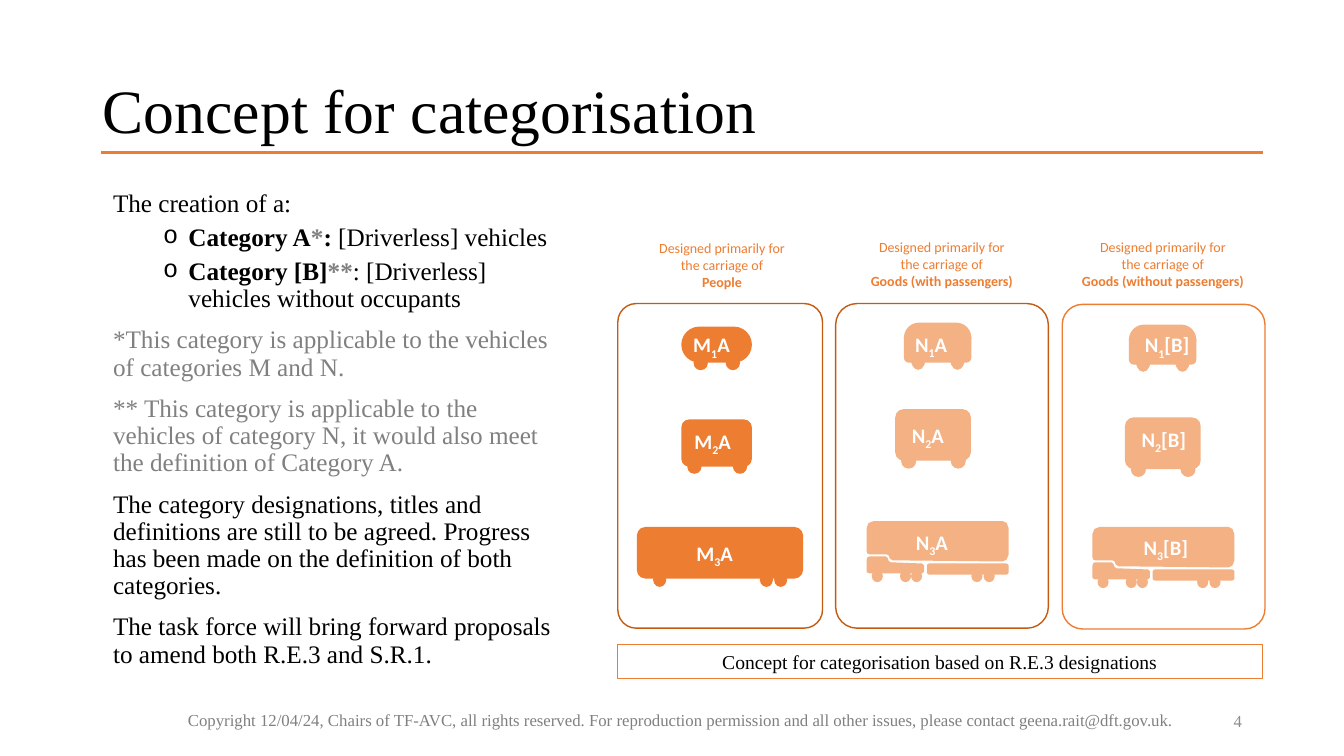
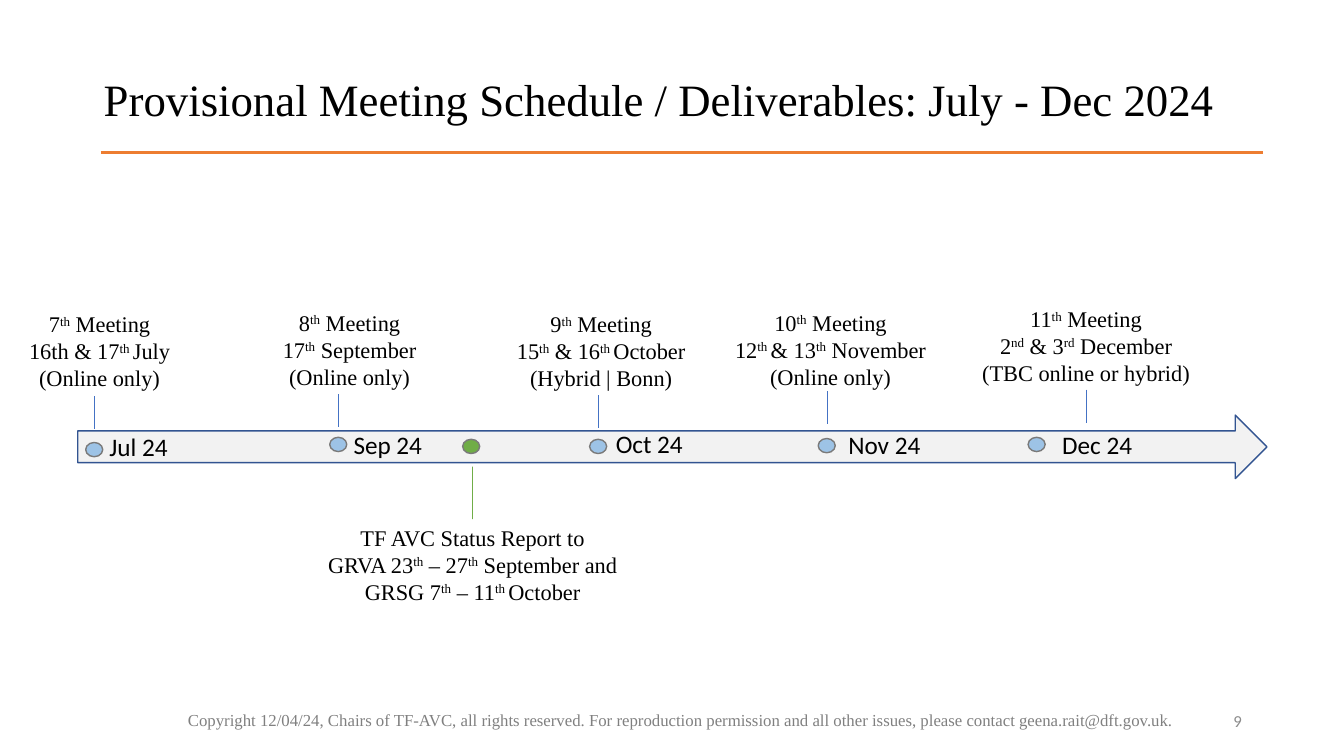
from lxml import etree
from pptx import Presentation
from pptx.dml.color import RGBColor
from pptx.enum.shapes import MSO_CONNECTOR, MSO_SHAPE
from pptx.enum.text import MSO_ANCHOR, PP_ALIGN
from pptx.oxml.ns import qn
from pptx.util import Cm, Pt

ROUNDED, OVAL = MSO_SHAPE.ROUNDED_RECTANGLE, MSO_SHAPE.OVAL
RECTANGLE, RIGHT_ARROW = MSO_SHAPE.RECTANGLE, MSO_SHAPE.RIGHT_ARROW
STRAIGHT = MSO_CONNECTOR.STRAIGHT
LEFT, CENTER, RIGHT = PP_ALIGN.LEFT, PP_ALIGN.CENTER, PP_ALIGN.RIGHT
TOP, MIDDLE = MSO_ANCHOR.TOP, MSO_ANCHOR.MIDDLE

SERIF, SANS = "Times New Roman", "Calibri"
BLACK, WHITE, GREY, NUMBER_GREY = "000000", "FFFFFF", "808080", "8C8C8C"
ORANGE, DARK_ORANGE, LIGHT_ORANGE = "ED7D31", "C55A11", "F4B183"
BLUE, LIGHT_BLUE, ARROW_BLUE = "4472C4", "9DC3E6", "325491"
GREEN, DOT_LINE, ARROW_FILL = "70AD47", "7A7A7A", "F2F2F2"

SUPERSCRIPT, SUBSCRIPT = "30000", "-25000"
FOOTER = ("Copyright 12/04/24, Chairs of TF-AVC, all rights reserved. For reproduction "
          "permission and all other issues, please contact geena.rait@dft.gov.uk.")

# Outlines of the truck's trailer and cab, in cm from its top left corner
TRAILER = [(0, .18), (.05, .05), (.18, 0), (3.43, 0), (3.53, .05), (3.58, .18),
           (3.58, .84), (3.53, .97), (3.43, 1.02), (.66, .99), (.59, .95),
           (.56, .87), (.51, .84), (.08, .84), (.02, .82), (0, .76)]
CAB = [(0, .99), (.02, .91), (.08, .89), (.48, .89), (.53, .93), (.56, 1.01),
       (.61, 1.04), (1.4, 1.07), (1.45, 1.12), (1.45, 1.27), (1.4, 1.32),
       (.08, 1.32), (.02, 1.3), (0, 1.27)]


# Basic elements
def colour(hex_string):
    return RGBColor.from_string(hex_string)


def style_font(font, size, name, hex_colour, bold=None):
    font.size, font.name, font.bold = Pt(size), name, bold
    font.color.rgb = colour(hex_colour)


def paint(shape, fill=None, line=None):
    shape.shadow.inherit = False
    if fill:
        shape.fill.solid()
        shape.fill.fore_color.rgb = colour(fill)
    else:
        shape.fill.background()
    if line:
        shape.line.color.rgb = colour(line)
        shape.line.width = Pt(1)
    else:
        shape.line.fill.background()


def add_box(slide, kind, box, fill=None, line=None, corner=None):
    shape = slide.shapes.add_shape(kind, *map(Cm, box))
    paint(shape, fill, line)
    if corner is not None:
        shape.adjustments[0] = corner
    return shape


def add_outline(slide, left, top, points, fill):
    corners = [(Cm(left + x), Cm(top + y)) for x, y in points]
    builder = slide.shapes.build_freeform(*corners[0])
    builder.add_line_segments(corners[1:], close=True)
    paint(builder.convert_to_shape(), fill)


def add_line(slide, start, end, hex_colour, width):
    line = slide.shapes.add_connector(STRAIGHT, *map(Cm, start + end))
    line.line.color.rgb = colour(hex_colour)
    line.line.width = Pt(width)
    etree.SubElement(line._element.spPr, qn("a:effectLst"))
    return line


def add_marked_runs(paragraph, text, baseline):
    """Write text; the pieces between ^ signs are raised or lowered."""
    for index, piece in enumerate(text.split("^")):
        if piece:
            run = paragraph.add_run()
            run.text = piece
            if index % 2:
                run._r.get_or_add_rPr().set("baseline", baseline)


def add_text(slide, box, lines, size, name=SERIF, hex_colour=BLACK, bold=None,
             align=LEFT, anchor=TOP, baseline=SUPERSCRIPT):
    text_box = slide.shapes.add_textbox(*map(Cm, box))
    frame = text_box.text_frame
    frame.word_wrap, frame.vertical_anchor = True, anchor
    for index, text in enumerate(lines):
        paragraph = frame.add_paragraph() if index else frame.paragraphs[0]
        paragraph.alignment = align
        style_font(paragraph.font, size, name, hex_colour, bold)
        add_marked_runs(paragraph, text, baseline)
    return text_box


# What the slides share: title, rule, footer and number
def add_titled_slide(presentation, title, box, size, number, number_font):
    slide = presentation.slides.add_slide(presentation.slide_layouts[5])
    placeholder = slide.shapes.title
    placeholder.left, placeholder.top, placeholder.width, placeholder.height = map(Cm, box)
    frame = placeholder.text_frame
    frame.text, frame.vertical_anchor, frame.word_wrap = title, MIDDLE, True
    paragraph = frame.paragraphs[0]
    paragraph.alignment, paragraph.line_spacing = LEFT, 0.9
    style_font(paragraph.font, size, SERIF, BLACK)
    add_line(slide, (2.54, 3.85), (31.83, 3.85), ORANGE, 2.25)
    add_text(slide, (3.4, 17.63, 27.53, 1.02), [FOOTER], 12, hex_colour=GREY,
             align=CENTER, anchor=MIDDLE)
    add_text(slide, (23.93, 17.65, 7.62, 1.02), [number], 12, number_font, NUMBER_GREY,
             align=RIGHT, anchor=MIDDLE)
    return slide


# Vehicles
def add_wheels(slide, left, top, offsets, size, fill):
    for offset in offsets:
        add_box(slide, OVAL, (left + offset, top, *size), fill)


def add_vehicle(slide, body, wheel_offsets, wheel_drop, wheel_size, fill, corner=None):
    left, top = body[:2]
    add_box(slide, ROUNDED, body, fill, corner=corner)
    add_wheels(slide, left, top + wheel_drop, wheel_offsets, wheel_size, fill)


def add_small_van(slide, left, top):
    add_box(slide, ROUNDED, (left, top, 1.7, .76), LIGHT_ORANGE, corner=.5)
    add_vehicle(slide, (left, top + .25, 1.7, .76), (.18, 1.17), .43, (.36, .51), LIGHT_ORANGE)


def add_large_van(slide, left, top):
    add_vehicle(slide, (left, top, 1.91, 1.3), (.15, 1.4), 1.12, (.38, .38), LIGHT_ORANGE)


def add_truck(slide, left, top):
    add_outline(slide, left, top, TRAILER, LIGHT_ORANGE)
    add_outline(slide, left, top, CAB, LIGHT_ORANGE)
    add_box(slide, ROUNDED, (left + 1.52, top + 1.07, 2.06, .28), LIGHT_ORANGE, corner=.22)
    add_wheels(slide, left, top + 1.24, (.13, .84, 1.12, 2.64, 2.95), (.28, .3), LIGHT_ORANGE)


def add_panel(slide, box, line, corner, heading_box, purpose):
    add_box(slide, ROUNDED, box, line=line, corner=corner)
    heading = add_text(slide, heading_box,
                       ["Designed primarily for", "the carriage of", purpose],
                       10, SANS, ORANGE, align=CENTER)
    heading.text_frame.paragraphs[2].font.bold = True


def add_vehicle_labels(slide, letter, suffix, positions):
    for number, (left, top) in enumerate(positions, 1):
        add_text(slide, (left, top, 2.24, .89), [f"{letter}^{number}^{suffix}"],
                 14.7, SANS, WHITE, bold=True, baseline=SUBSCRIPT)


def add_body(slide):
    """Each paragraph: bulleted or not, then runs of text, colour and bold."""
    paragraphs = [
        (False, [("The creation of a:", BLACK, False)]),
        (True, [("Category A", BLACK, True), ("*", GREY, True), (": ", BLACK, True),
                ("[Driverless] vehicles", BLACK, False)]),
        (True, [("Category [B]", BLACK, True), ("**", GREY, True),
                (": [Driverless] vehicles without occupants", BLACK, False)]),
        (False, [("*This category is applicable to the vehicles of categories M and N.",
                  GREY, False)]),
        (False, [("** This category is applicable to the vehicles of category N, it would "
                  "also meet the definition of Category A.", GREY, False)]),
        (False, [("The category designations, titles and definitions are still to be agreed. "
                  "Progress has been made on the definition of both categories.",
                  BLACK, False)]),
        (False, [("The task force will bring forward proposals to amend both R.E.3 and S.R.1.",
                  BLACK, False)]),
    ]
    frame = slide.shapes.add_textbox(Cm(2.6), Cm(4.67), Cm(11.73), Cm(12.98)).text_frame
    frame.word_wrap = True
    for index, (bulleted, runs) in enumerate(paragraphs):
        paragraph = frame.add_paragraph() if index else frame.paragraphs[0]
        paragraph.line_spacing = 0.9
        paragraph.space_before = Pt(5 if bulleted else 10)
        if bulleted:
            properties = paragraph._p.get_or_add_pPr()
            properties.set("marL", str(Cm(1.9)))
            properties.set("indent", str(Cm(-.64)))
            etree.SubElement(properties, qn("a:buFont")).set("typeface", "Courier New")
            etree.SubElement(properties, qn("a:buChar")).set("char", "o")
        for text, hex_colour, bold in runs:
            run = paragraph.add_run()
            run.text = text
            style_font(run.font, 18, SERIF, hex_colour, bold)


# Slides
def build_concept_slide(presentation):
    slide = add_titled_slide(presentation, "Concept for categorisation",
                             (2.34, 1.02, 29.21, 3.68), 44, "4", SERIF)
    add_body(slide)

    # Panels for people, goods with and goods without passengers
    add_panel(slide, (15.57, 7.65, 5.16, 8.18), DARK_ORANGE, .09,
              (16, 5.92, 4.39, 1.55), "People")
    add_panel(slide, (21.06, 7.65, 5.36, 8.18), DARK_ORANGE, .1,
              (21.18, 5.89, 5.11, 1.55), "Goods (with passengers)")
    add_panel(slide, (26.77, 7.67, 5.11, 8.18), ORANGE, .1,
              (26.75, 5.89, 5.11, 1.55), "Goods (without passengers)")

    # Passenger vehicles
    add_vehicle(slide, (17.17, 8.23, 1.78, .91), (.31, 1.12), .74, (.36, .36), ORANGE, .5)
    add_vehicle(slide, (17.17, 10.57, 1.78, 1.19), (.15, 1.3), 1.01, (.36, .36), ORANGE)
    add_vehicle(slide, (16.05, 13.28, 4.19, 1.3), (.41, 3.1, 3.46), 1.15, (.33, .36), ORANGE)

    # Goods vehicles
    for add_goods_vehicle, positions in (
            (add_small_van, [(22.78, 8.13), (28.45, 8.18)]),
            (add_large_van, [(22.56, 10.31), (28.35, 10.52)]),
            (add_truck, [(21.84, 13.13), (27.53, 13.28)])):
        for left, top in positions:
            add_goods_vehicle(slide, left, top)

    add_vehicle_labels(slide, "M", "A", [(17.22, 8.25), (17.25, 10.69), (17.3, 13.51)])
    add_vehicle_labels(slide, "N", "A", [(22.81, 8.23), (22.73, 10.52), (22.83, 13.23)])
    add_vehicle_labels(slide, "N", "[B]", [(28.6, 8.25), (28.52, 10.64), (28.57, 13.36)])

    # Caption
    caption = add_box(slide, RECTANGLE, (15.56, 16.24, 16.26, .86), WHITE, ORANGE)
    caption.text_frame.text = "Concept for categorisation based on R.E.3 designations"
    paragraph = caption.text_frame.paragraphs[0]
    paragraph.alignment = CENTER
    style_font(paragraph.font, 14, SERIF, BLACK)


def add_dot(slide, left, top, fill):
    add_box(slide, OVAL, (left, top, .43, .36), fill, DOT_LINE)


def build_schedule_slide(presentation):
    slide = add_titled_slide(presentation,
                             "Provisional Meeting Schedule / Deliverables: July - Dec 2024",
                             (2.36, .74, 30, 3.68), 32, "9", SANS)
    add_box(slide, RIGHT_ARROW, (1.96, 10.46, 29.97, 1.6), ARROW_FILL, ARROW_BLUE)

    # Month, its place, dot, stem top, text (centre, top, width), lines
    meetings = [
        ("Jul 24", (2.51, 10.74), (2.16, 11.15), (2.38, 9.98), (2.51, 7.7, 4.6),
         ["7^th^ Meeting", "16th & 17^th ^July", "(Online only)"]),
        ("Sep 24", (8.66, 10.69), (8.31, 11.02), (8.53, 9.93), (8.81, 7.67, 4.6),
         ["8^th^ Meeting", "17^th^ September", "(Online only)"]),
        ("Oct 24", (15.27, 10.67), (14.86, 11.07), (15.09, 9.96), (15.15, 7.7, 5.4),
         ["9^th^ Meeting", "15^th^ & 16^th ^October", "(Hybrid | Bonn)"]),
        ("Nov 24", (21.13, 10.69), (20.62, 11.05), (20.85, 9.86), (20.93, 7.67, 6.2),
         ["10^th^ Meeting", "12^th ^& 13^th^ November", "(Online only)"]),
        ("Dec 24", (26.52, 10.69), (25.91, 11.02), (27.38, 9.82), (27.37, 7.57, 6.6),
         ["11^th^ Meeting", "2^nd^ & 3^rd^ December", "(TBC online or hybrid)"]),
    ]
    for month, month_place, dot, stem, (centre, top, width), lines in meetings:
        stem_x, stem_top = stem
        add_dot(slide, *dot, LIGHT_BLUE)
        add_text(slide, (*month_place, 3.15, 1.02), [month], 18, SANS)
        add_text(slide, (centre - width / 2, top, width, 2.31), lines, 16, align=CENTER)
        add_line(slide, stem, (stem_x, stem_top + .83), BLUE, .5)

    # Status report
    add_dot(slide, 11.66, 11.07, GREEN)
    report = add_text(slide, (7.89, 13.08, 8.04, 2.31),
                      ["TF AVC Status Report to",
                       "GRVA 23^th^ – 27^th^ September and GRSG 7^th^ – 11^th ^October"],
                      16, align=CENTER)
    stem = add_line(slide, (11.91, 11.76), (11.91, 13.08), GREEN, .5)
    stem.end_connect(report, 0)


def main():
    presentation = Presentation()
    presentation.slide_width, presentation.slide_height = Cm(33.87), Cm(19.05)
    build_concept_slide(presentation)
    build_schedule_slide(presentation)
    presentation.save("out.pptx")


if __name__ == "__main__":
    main()
